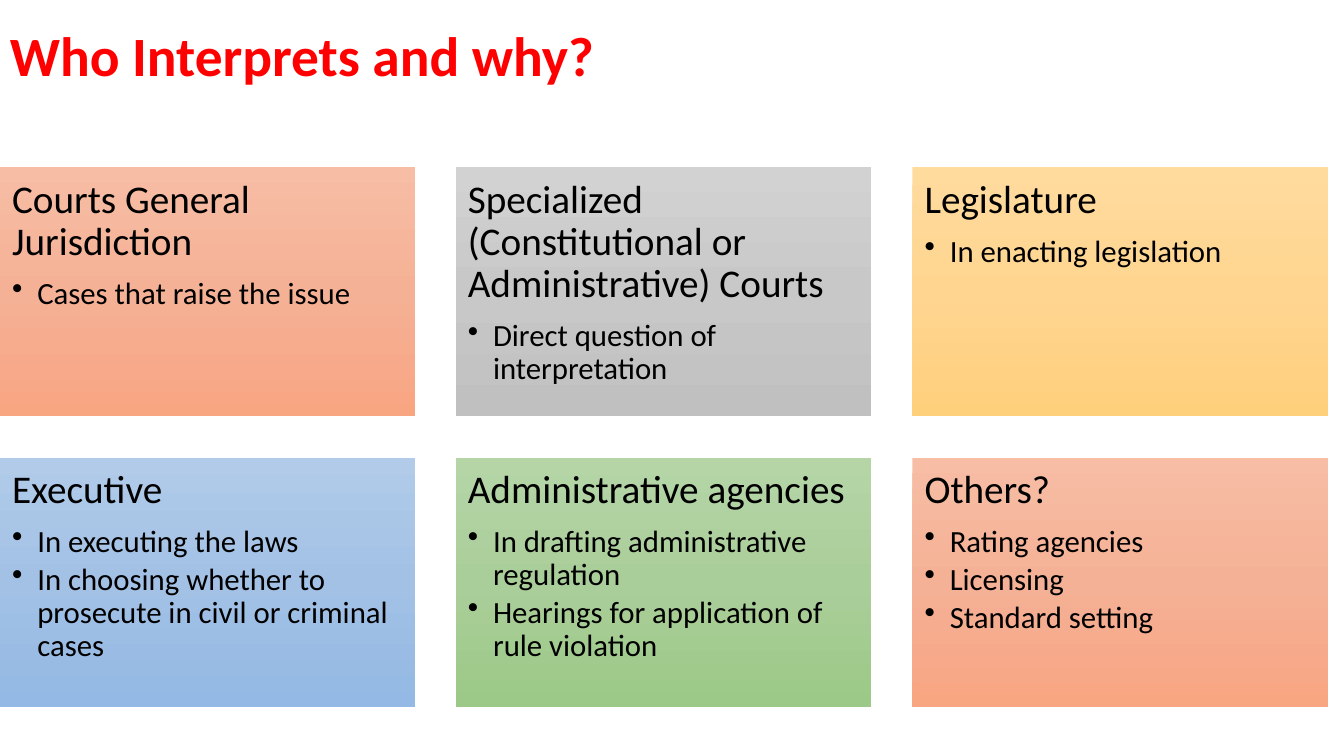
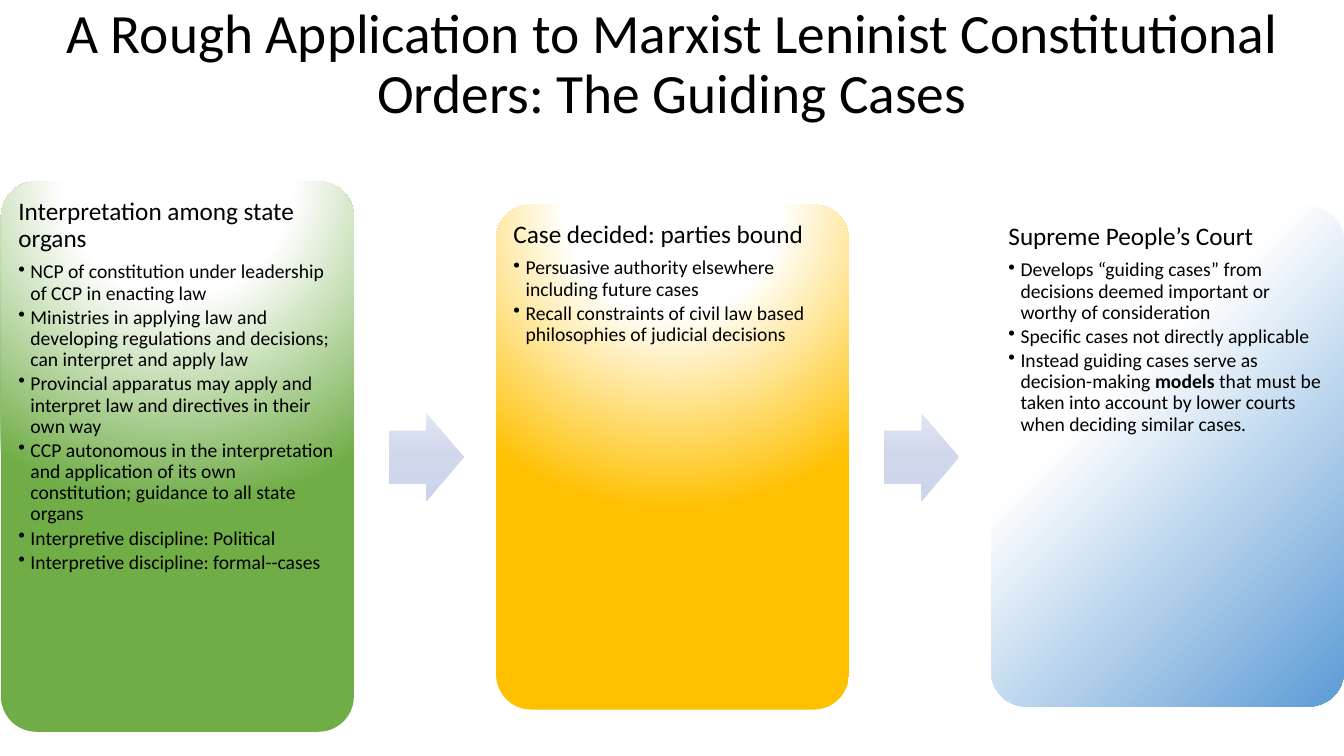
"""Build two slides on who interprets constitutions and how guiding cases arise."""
from dataclasses import dataclass

from lxml.etree import SubElement
from pptx import Presentation
from pptx.dml.color import RGBColor
from pptx.enum.shapes import MSO_SHAPE as Preset
from pptx.enum.text import MSO_ANCHOR as Anchor, PP_ALIGN as Align
from pptx.oxml import parse_xml
from pptx.oxml.ns import nsdecls, qn
from pptx.shapes.autoshape import Shape
from pptx.slide import Slide
from pptx.text.text import TextFrame, _Paragraph as Paragraph
from pptx.util import Pt

EMU_PER_PX = 9144
FONT = "Calibri"
SLIDE_WIDTH, SLIDE_HEIGHT = 1333, 750

BLACK = RGBColor(0x00, 0x00, 0x00)
WHITE = RGBColor(0xFF, 0xFF, 0xFF)
RED = RGBColor(0xFF, 0x00, 0x00)
GREEN = RGBColor(0x70, 0xAD, 0x47)
GOLD = RGBColor(0xFF, 0xC0, 0x00)
BLUE = RGBColor(0x5B, 0x9B, 0xD5)
SALMON_TINTS = RGBColor(0xF7, 0xBD, 0xA5), RGBColor(0xF5, 0xB1, 0x96), RGBColor(0xF8, 0xA5, 0x82)
GREY_TINTS = RGBColor(0xD2, 0xD2, 0xD2), RGBColor(0xC8, 0xC8, 0xC8), RGBColor(0xC0, 0xC0, 0xC0)
AMBER_TINTS = RGBColor(0xFF, 0xDB, 0x9E), RGBColor(0xFF, 0xD5, 0x90), RGBColor(0xFF, 0xD0, 0x7C)
BLUE_TINTS = RGBColor(0xB1, 0xCB, 0xE9), RGBColor(0xA3, 0xC1, 0xE5), RGBColor(0x93, 0xB9, 0xE4)
GREEN_TINTS = RGBColor(0xB5, 0xD5, 0xA7), RGBColor(0xAA, 0xCE, 0x9A), RGBColor(0x9C, 0xC9, 0x87)
ARROW_TINTS = RGBColor(0xDE, 0xE3, 0xF2), RGBColor(0xD2, 0xD8, 0xEC), RGBColor(0xCC, 0xD3, 0xEB)

TOP_GLOW = '<a:path path="circle"><a:fillToRect l="50000" t="-80000" r="50000" b="180000"/></a:path>'


@dataclass(frozen=True)
class Box:
    left: int
    top: int
    width: int
    height: int

    def emu(self) -> tuple[int, ...]:
        return tuple(px(length) for length in (self.left, self.top, self.width, self.height))


@dataclass(frozen=True)
class Gradient:
    colors: tuple[RGBColor, ...]
    middle: int = 50
    shade: str = '<a:lin ang="5400000" scaled="0"/>'


@dataclass(frozen=True)
class TextStyle:
    heading_size: int
    bullet_size: int
    inset: int
    indent: int


@dataclass(frozen=True)
class Card:
    heading: str
    bullets: tuple[str, ...]
    gradient: Gradient
    height: int


def glow(color: RGBColor, shade: str = TOP_GLOW) -> Gradient:
    return Gradient((WHITE, WHITE, color), 35, shade)


TILE_STYLE = TextStyle(28, 22, 12, 25)
STAGE_STYLE = TextStyle(18, 14, 7, 12)
TILE_WIDTH, TILE_HEIGHT = 412, 247
GRID_WIDTH, GRID_TOP, ROW_STEP, COLUMNS = 1317, 166, 288, 3
STAGE_LEFT, STAGE_WIDTH, STAGE_STEP, STAGE_MIDDLE = 1, 350, 491, 453
ARROW_OFFSET, ARROW_WIDTH, ARROW_HEIGHT = 385, 74, 87
EMPHASIS = "models"

TILES = (
    Card("Courts General Jurisdiction", ("Cases that raise the issue",),
         Gradient(SALMON_TINTS), TILE_HEIGHT),
    Card("Specialized (Constitutional or Administrative) Courts",
         ("Direct question of interpretation",), Gradient(GREY_TINTS), TILE_HEIGHT),
    Card("Legislature", ("In enacting legislation",), Gradient(AMBER_TINTS), TILE_HEIGHT),
    Card("Executive",
         ("In executing the laws",
          "In choosing whether to prosecute in civil or criminal cases"),
         Gradient(BLUE_TINTS), TILE_HEIGHT),
    Card("Administrative agencies",
         ("In drafting administrative regulation",
          "Hearings for application of rule violation"),
         Gradient(GREEN_TINTS), TILE_HEIGHT),
    Card("Others?", ("Rating agencies", "Licensing", "Standard setting"),
         Gradient(SALMON_TINTS), TILE_HEIGHT),
)

STAGES = (
    Card("Interpretation among state organs",
         ("NCP of constitution under leadership of CCP in enacting law",
          "Ministries in applying law and developing regulations and decisions; "
          "can interpret and apply law",
          "Provincial apparatus may apply and interpret law and directives in their own way",
          "CCP autonomous in the interpretation and application of its own constitution; "
          "guidance to all state organs",
          "Interpretive discipline: Political",
          "Interpretive discipline: formal--cases"),
         glow(GREEN), 546),
    Card("Case decided: parties bound",
         ("Persuasive authority elsewhere including future cases",
          "Recall constraints of civil law based philosophies of judicial decisions"),
         glow(GOLD), 501),
    Card("Supreme People’s Court",
         ("Develops “guiding cases” from decisions deemed important or worthy of consideration",
          "Specific cases not directly applicable",
          "Instead guiding cases serve as decision-making models that must be taken into "
          "account by lower courts when deciding similar cases."),
         glow(BLUE, '<a:lin ang="2700000" scaled="0"/>'), 496),
)


def px(length: int) -> int:
    return length * EMU_PER_PX


def set_font(paragraph: Paragraph, size: float, color: RGBColor = BLACK) -> None:
    font = paragraph.font
    font.name = FONT
    font.size = Pt(size)
    font.color.rgb = color


def add_title(slide: Slide, text: str, box: Box, color: RGBColor, bold: bool, align: Align) -> None:
    frame = slide.shapes.add_textbox(*box.emu()).text_frame
    frame.word_wrap = True
    frame.vertical_anchor = Anchor.MIDDLE
    paragraph = frame.paragraphs[0]
    paragraph.add_run().text = text
    paragraph.alignment = align
    paragraph.line_spacing = 0.9
    set_font(paragraph, 39.6, color)
    paragraph.font.bold = bold


def add_gradient_shape(slide: Slide, preset: Preset, box: Box, gradient: Gradient) -> Shape:
    shape = slide.shapes.add_shape(preset, *box.emu())
    stops = "".join(
        f'<a:gs pos="{position * 1000}"><a:srgbClr val="{color}"/></a:gs>'
        for position, color in zip((0, gradient.middle, 100), gradient.colors)
    )
    fill = parse_xml(
        f'<a:gradFill {nsdecls("a")} rotWithShape="1"><a:gsLst>{stops}</a:gsLst>'
        f'{gradient.shade}</a:gradFill>'
    )
    shape._element.spPr.find(qn("a:prstGeom")).addnext(fill)
    shape.line.fill.background()
    shape.shadow.inherit = False
    return shape


def format_paragraph(paragraph: Paragraph, size: int, space_after: int, indent: int = 0) -> None:
    paragraph.alignment = Align.LEFT
    paragraph.line_spacing = 0.9
    properties = paragraph._p.get_or_add_pPr()
    spacing = SubElement(properties, qn("a:spcAft"))
    SubElement(spacing, qn("a:spcPct")).set("val", str(space_after * 1000))
    if indent:
        paragraph.level = 1
        properties.set("marL", str(px(indent)))
        properties.set("indent", str(px(-indent)))
        SubElement(properties, qn("a:buChar")).set("char", "•")
    set_font(paragraph, size)


def add_bullet(frame: TextFrame, text: str, style: TextStyle) -> None:
    paragraph = frame.add_paragraph()
    for part in filter(None, text.partition(EMPHASIS)):
        run = paragraph.add_run()
        run.text = part
        if part == EMPHASIS:
            run.font.bold = True
    format_paragraph(paragraph, style.bullet_size, 15, style.indent)


def add_card(slide: Slide, preset: Preset, box: Box, card: Card, style: TextStyle) -> Shape:
    shape = add_gradient_shape(slide, preset, box, card.gradient)
    frame = shape.text_frame
    frame.word_wrap = True
    frame.vertical_anchor = Anchor.TOP
    frame.margin_left = frame.margin_right = px(style.inset)
    frame.margin_top = frame.margin_bottom = px(style.inset)
    heading = frame.paragraphs[0]
    heading.add_run().text = card.heading
    format_paragraph(heading, style.heading_size, 35)
    for bullet in card.bullets:
        add_bullet(frame, bullet, style)
    return shape


def build_interpreters(slide: Slide) -> None:
    add_title(slide, "Who Interprets and why?", Box(0, 0, 612, 117), RED, True, Align.LEFT)
    for index, tile in enumerate(TILES):
        row, column = divmod(index, COLUMNS)
        left = (GRID_WIDTH - TILE_WIDTH) * column // (COLUMNS - 1)
        box = Box(left, GRID_TOP + row * ROW_STEP, TILE_WIDTH, tile.height)
        add_card(slide, Preset.RECTANGLE, box, tile, TILE_STYLE)


def build_guiding_cases(slide: Slide) -> None:
    add_title(
        slide,
        "A Rough Application to Marxist Leninist Constitutional Orders: The Guiding Cases",
        Box(0, 0, SLIDE_WIDTH, 130), BLACK, False, Align.CENTER,
    )
    for index, stage in enumerate(STAGES):
        left = STAGE_LEFT + index * STAGE_STEP
        box = Box(left, STAGE_MIDDLE - stage.height // 2, STAGE_WIDTH, stage.height)
        card = add_card(slide, Preset.ROUNDED_RECTANGLE, box, stage, STAGE_STYLE)
        card.adjustments[0] = 0.1
        if index < len(STAGES) - 1:
            arrow_box = Box(left + ARROW_OFFSET, STAGE_MIDDLE - ARROW_HEIGHT // 2,
                            ARROW_WIDTH, ARROW_HEIGHT)
            arrow = add_gradient_shape(slide, Preset.RIGHT_ARROW, arrow_box, Gradient(ARROW_TINTS))
            arrow.adjustments[0] = 0.6


def main() -> None:
    presentation = Presentation()
    presentation.slide_width = px(SLIDE_WIDTH)
    presentation.slide_height = px(SLIDE_HEIGHT)
    blank = presentation.slide_layouts[6]
    for build in (build_interpreters, build_guiding_cases):
        build(presentation.slides.add_slide(blank))
    presentation.save("out.pptx")


if __name__ == "__main__":
    main()
